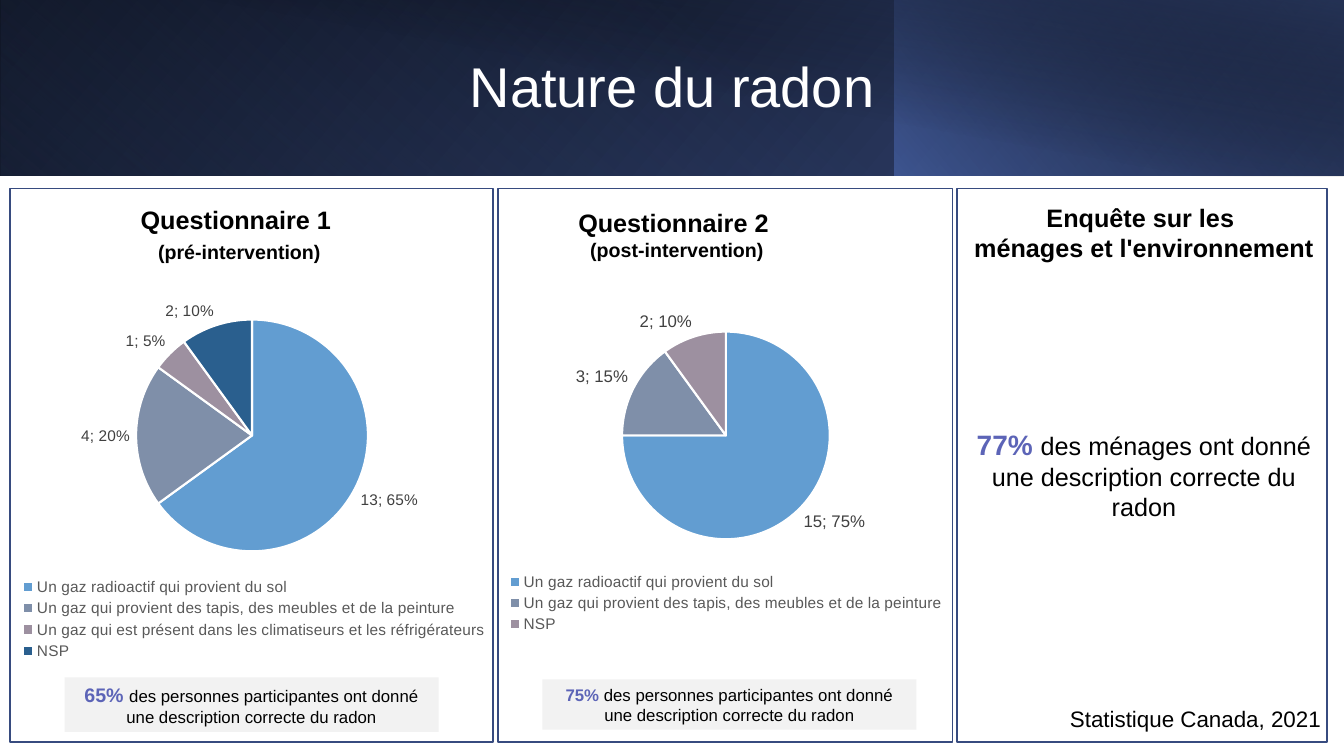
from lxml import etree
from pptx import Presentation
from pptx.chart.data import CategoryChartData
from pptx.dml.color import RGBColor
from pptx.enum import chart as charts, shapes, text
from pptx.oxml.ns import qn
from pptx.util import Inches, Pt

FONT = "Arial"
BLACK = RGBColor(0x00, 0x00, 0x00)
WHITE = RGBColor(0xFF, 0xFF, 0xFF)
NAVY = RGBColor(0x25, 0x33, 0x56)
ROYAL = RGBColor(0x4A, 0x66, 0xAC)
DEEP_BLUE = RGBColor(0x38, 0x4C, 0x81)
BORDER = RGBColor(0x37, 0x4B, 0x7F)
ACCENT = RGBColor(0x5C, 0x64, 0xB7)
PALE_GREY = RGBColor(0xF2, 0xF2, 0xF2)
LEGEND_GREY = RGBColor(0x59, 0x59, 0x59)
LABEL_GREY = RGBColor(0x40, 0x40, 0x40)
SLICES = [RGBColor(0x62, 0x9D, 0xD1), RGBColor(0x7F, 0x8F, 0xA9),
          RGBColor(0x9D, 0x90, 0xA0), RGBColor(0x2A, 0x5F, 0x8E)]

SOIL = "Un gaz radioactif qui provient du sol"
CARPETS = "Un gaz qui provient des tapis, des meubles et de la peinture"
COOLING = "Un gaz qui est présent dans les climatiseurs et les réfrigérateurs"
UNKNOWN = "NSP"
FINDING = "des personnes participantes ont donné une description correcte du radon"


def add_rect(page, area):
    box = page.shapes.add_shape(shapes.MSO_SHAPE.RECTANGLE, *map(Inches, area))
    box.shadow.inherit = False
    box.line.fill.background()
    return box


def add_gradient(page, area, stops, angle, rotation=0, flip=True):
    """Each stop is (percent, colour, opacity percent); angle runs clockwise."""
    box = add_rect(page, area)
    box.rotation = rotation
    if flip:
        box._element.spPr.find(qn("a:xfrm")).set("flipH", "1")
    box.fill.gradient()
    box.fill.gradient_angle = 360 - angle
    for stop, (percent, colour, _) in zip(box.fill.gradient_stops, stops):
        stop.position = percent / 100
        stop.color.rgb = colour
    colours = box._element.spPr.iter(qn("a:srgbClr"))
    for element, (_, _, opacity) in zip(list(colours), stops):
        etree.SubElement(element, qn("a:alpha")).set("val", str(opacity * 1000))


def add_panel(page, area):
    panel = add_rect(page, area)
    panel.fill.solid()
    panel.fill.fore_color.rgb = WHITE
    panel.line.color.rgb = BORDER
    panel.line.width = Pt(1)


def write_span(para, words, size=18, colour=BLACK, bold=False):
    for number, line in enumerate(words.split("\n")):
        if number:
            para.add_line_break()
        if line:
            span = para.add_run()
            span.text = line
            span.font.name = FONT
            span.font.size = Pt(size)
            span.font.bold = bold
            span.font.color.rgb = colour


def add_text(page, area, paragraphs, align=text.PP_ALIGN.CENTER, fill=None):
    """Each paragraph is a list of (words, format) pairs."""
    if fill is None:
        box = page.shapes.add_textbox(*map(Inches, area))
    else:
        box = add_rect(page, area)
        box.fill.solid()
        box.fill.fore_color.rgb = fill
    frame = box.text_frame
    frame.word_wrap = True
    for number, spans in enumerate(paragraphs):
        para = frame.add_paragraph() if number else frame.paragraphs[0]
        para.alignment = align
        for words, style in spans:
            write_span(para, words, **style)


def make_layout(frame, area, inner=False):
    """Manual chart layout from slide positions in inches."""
    layout = etree.Element(qn("c:layout"))
    manual = etree.SubElement(layout, qn("c:manualLayout"))
    left, top, width, height = frame
    values = {"x": (area[0] - left) / width, "y": (area[1] - top) / height,
              "w": area[2] / width, "h": area[3] / height}
    settings = {"layoutTarget": "inner"} if inner else {}
    settings.update(xMode="edge", yMode="edge")
    settings.update({name: f"{value:.4f}" for name, value in values.items()})
    for name, value in settings.items():
        etree.SubElement(manual, qn(f"c:{name}")).set("val", value)
    return layout


def style_font(font, size, colour):
    font.name = FONT
    font.size = Pt(size)
    font.color.rgb = colour


def add_pie(page, frame, answers, pie_area, legend_area, label_size):
    data = CategoryChartData()
    data.categories = list(answers)
    data.add_series("Series 1", answers.values())
    chart = page.shapes.add_chart(charts.XL_CHART_TYPE.PIE,
                                  *map(Inches, frame), data).chart
    chart.has_title = False
    style_font(chart.font, 10, BLACK)

    # Slices
    series = chart.plots[0].series[0]
    for number, colour in zip(range(len(answers)), SLICES):
        slice_format = series.points[number].format
        slice_format.fill.solid()
        slice_format.fill.fore_color.rgb = colour
        slice_format.line.color.rgb = WHITE
        slice_format.line.width = Pt(1.5)

    # Labels
    labels = series.data_labels
    labels.show_value = True
    labels.show_percentage = True
    labels.position = charts.XL_LABEL_POSITION.OUTSIDE_END
    style_font(labels.font, label_size, LABEL_GREY)
    separator = etree.Element(qn("c:separator"))
    separator.text = "; "
    labels._element.find(qn("c:showBubbleSize")).addnext(separator)

    # Legend and layout
    chart.has_legend = True
    chart.legend.position = charts.XL_LEGEND_POSITION.BOTTOM
    chart.legend.include_in_layout = False
    style_font(chart.legend.font, 11, LEGEND_GREY)
    legend = chart.legend._element
    legend.find(qn("c:legendPos")).addnext(make_layout(frame, legend_area))
    plot_area = chart._chartSpace.chart.plotArea
    for old in plot_area.findall(qn("c:layout")):
        plot_area.remove(old)
    plot_area.insert(0, make_layout(frame, pie_area, inner=True))


def add_title(page, words):
    title = page.shapes.title
    title.left, title.top, title.width, title.height = map(
        Inches, (0, 0.32, 13.33, 1.13))
    page.shapes._spTree.append(title._element)
    title.text_frame.vertical_anchor = text.MSO_ANCHOR.MIDDLE
    para = title.text_frame.paragraphs[0]
    para.alignment = text.PP_ALIGN.CENTER
    para.line_spacing = 0.9
    write_span(para, words, size=40, colour=WHITE)


def main():
    deck = Presentation()
    deck.slide_width, deck.slide_height = Inches(13.33), Inches(7.5)
    page = deck.slides.add_slide(deck.slide_layouts[5])

    # Header band
    add_gradient(page, (0, 0, 13.33, 1.74),
                 [(0, BLACK, 100), (100, DEEP_BLUE, 100)], 140)
    add_gradient(page, (0, 0, 8.88, 1.74),
                 [(20, ROYAL, 0), (100, NAVY, 55)], 230, rotation=180)
    add_gradient(page, (8.87, 0, 4.46, 1.74),
                 [(0, ROYAL, 66), (100, BLACK, 30)], 220)
    add_gradient(page, (0.5, 0, 12.83, 1.75),
                 [(50, BLACK, 0), (99, NAVY, 52)], 280, flip=False)
    add_title(page, "Nature du radon")

    # Panels
    for left, width in ((0.1, 4.79), (4.94, 4.51), (9.49, 3.67)):
        add_panel(page, (left, 1.87, width, 5.49))

    # Headings
    heading = dict(size=18, bold=True)
    subheading = dict(size=14, bold=True)
    add_text(page, (0.15, 1.98, 4.38, 0.71),
             [[("Questionnaire 1\n ", heading), ("(pré-intervention)", subheading)]])
    add_text(page, (4.81, 2.01, 3.81, 0.64),
             [[("Questionnaire 2 \n", heading), ("(post-intervention)", subheading)]])
    add_text(page, (9.13, 1.96, 4.43, 0.71),
             [[("Enquête sur les ", heading)], [("ménages et l'environnement", heading)]])

    # Pies
    add_pie(page, (-0.01, 2.83, 5.04, 3.77),
            {SOIL: 13, CARPETS: 4, COOLING: 1, UNKNOWN: 2},
            (1.35, 3.17, 2.3, 2.3), (0.15, 5.7, 4.75, 0.88), label_size=11)
    add_pie(page, (4.42, 2.94, 5.54, 3.38),
            {SOIL: 15, CARPETS: 3, UNKNOWN: 2},
            (6.17, 3.29, 2.06, 2.06), (4.98, 5.65, 4.45, 0.66), label_size=12)

    # Findings
    for area, share, size in (((0.64, 6.72, 3.71, 0.54), "65% ", 14),
                              ((5.38, 6.74, 3.71, 0.5), "75% ", 12)):
        add_text(page, area, [[(share, dict(size=size, colour=ACCENT, bold=True)),
                               (FINDING, dict(size=12))]], fill=PALE_GREY)
    add_text(page, (9.49, 4.19, 3.71, 1.04),
             [[("77% ", dict(size=20, colour=ACCENT, bold=True)),
               ("des ménages ont donné une description correcte du radon", {})]])
    add_text(page, (9.13, 6.95, 4.07, 0.37),
             [[("Statistique Canada, 2021", dict(size=16))]],
             align=text.PP_ALIGN.RIGHT)

    deck.save("out.pptx")


if __name__ == "__main__":
    main()
